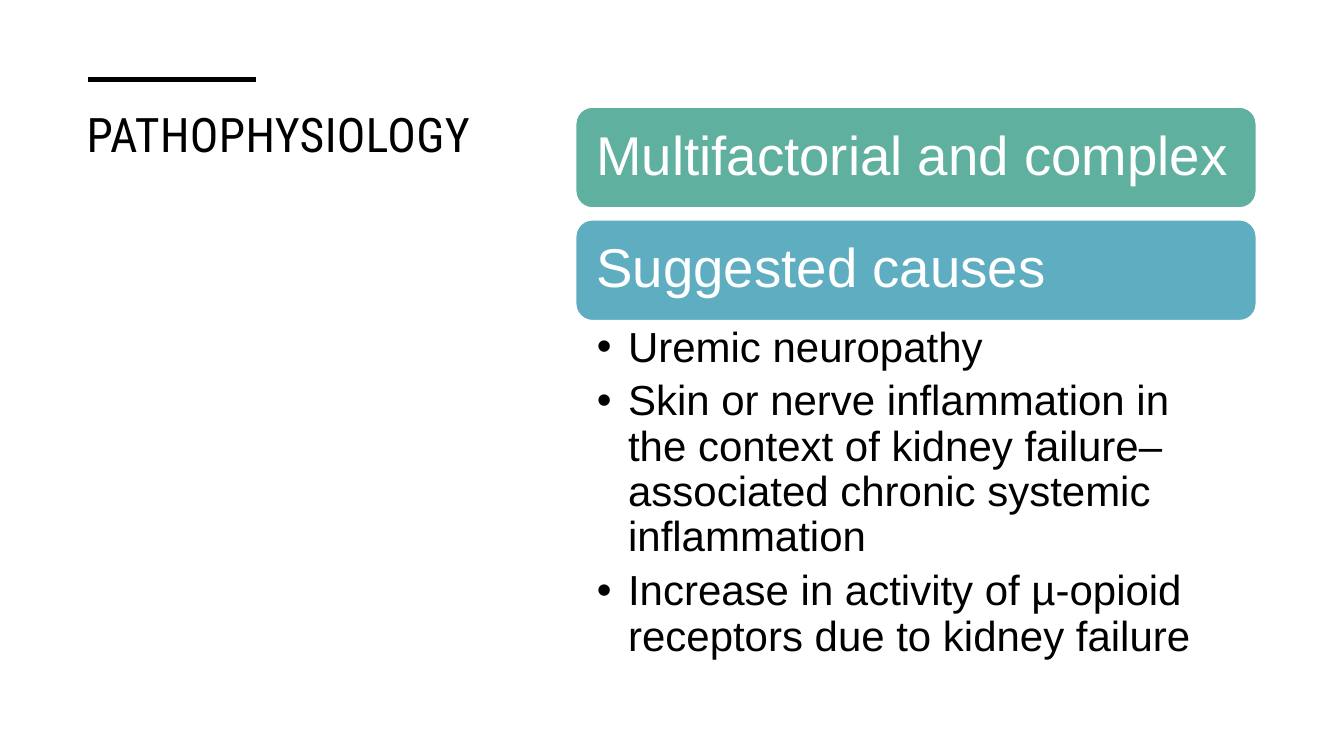
from dataclasses import dataclass

from lxml.etree import SubElement
from pptx import Presentation
from pptx.dml.color import RGBColor
from pptx.enum.shapes import MSO_CONNECTOR, MSO_SHAPE
from pptx.enum.text import MSO_ANCHOR, MSO_AUTO_SIZE, PP_ALIGN
from pptx.oxml.ns import qn
from pptx.slide import Slide
from pptx.text.text import TextFrame, _Paragraph
from pptx.util import Cm, Pt


@dataclass(frozen=True)
class Theme:
    ink: RGBColor = RGBColor(0x00, 0x00, 0x00)
    paper: RGBColor = RGBColor(0xFF, 0xFF, 0xFF)
    green: RGBColor = RGBColor(0x5F, 0xB0, 0x9F)
    blue: RGBColor = RGBColor(0x5F, 0xAD, 0xC1)
    title_font: str = "Roboto Condensed"
    body_font: str = "Arial"
    title_size: int = 34
    bar_size: int = 39
    bullet_size: int = 30


@dataclass(frozen=True)
class Bar:
    text: str
    fill: RGBColor


THEME = Theme()
BARS = [Bar("Multifactorial and complex", THEME.green),
        Bar("Suggested causes", THEME.blue)]
CAUSES = [
    "Uremic neuropathy",
    "Skin or nerve inflammation in the context of kidney failure–associated "
    "chronic systemic inflammation",
    "Increase in activity of µ-opioid receptors due to kidney failure",
]
# Column of bars, in cm
LEFT, TOP, WIDTH, BAR_HEIGHT, BAR_PITCH = 14.51, 2.7, 17.15, 2.54, 2.84
CAUSES_TOP = TOP + (len(BARS) - 1) * BAR_PITCH + BAR_HEIGHT


def format_runs(p: _Paragraph, font: str, size: int, color: RGBColor) -> None:
    p.alignment = PP_ALIGN.LEFT
    for r in p.runs:
        r.font.name = font
        r.font.size = Pt(size)
        r.font.color.rgb = color


def set_insets(tf: TextFrame, left: float, top: float, right: float, bottom: float) -> None:
    """Set the insets in cm, and wrap the text without resizing it."""
    tf.margin_left, tf.margin_top = Cm(left), Cm(top)
    tf.margin_right, tf.margin_bottom = Cm(right), Cm(bottom)
    tf.word_wrap = True
    tf.auto_size = MSO_AUTO_SIZE.NONE


def add_bullet(p: _Paragraph, indent: float) -> None:
    pPr = p._p.get_or_add_pPr()
    pPr.set("marL", str(Cm(indent)))
    pPr.set("indent", str(-Cm(indent)))
    SubElement(pPr, qn("a:buFont")).set("typeface", THEME.body_font)
    SubElement(pPr, qn("a:buChar")).set("char", "•")


def add_title(s: Slide) -> None:
    title = s.shapes.title
    title.left, title.top, title.width, title.height = Cm(1.93), Cm(2.51), Cm(10.87), Cm(11.05)
    tf = title.text_frame
    tf.text = "PATHOPHYSIOLOGY"
    set_insets(tf, 0.25, 0.13, 0.25, 0.13)
    tf.vertical_anchor = MSO_ANCHOR.TOP
    p = tf.paragraphs[0]
    format_runs(p, THEME.title_font, THEME.title_size, THEME.ink)
    p.runs[0].font._element.set("spc", "30")


def add_accent_line(s: Slide) -> None:
    line = s.shapes.add_connector(MSO_CONNECTOR.STRAIGHT, Cm(2.23), Cm(2), Cm(6.45), Cm(2))
    line.line.color.rgb = THEME.ink
    line.line.width = Pt(3.5)
    SubElement(line._element.spPr, qn("a:effectLst"))


def add_bar(s: Slide, bar: Bar, top: float) -> None:
    sp = s.shapes.add_shape(MSO_SHAPE.ROUNDED_RECTANGLE,
                            Cm(LEFT), Cm(top), Cm(WIDTH), Cm(BAR_HEIGHT))
    sp.shadow.inherit = False
    sp.fill.solid()
    sp.fill.fore_color.rgb = bar.fill
    sp.line.color.rgb = THEME.paper
    sp.line.width = Pt(1)
    tf = sp.text_frame
    tf.text = bar.text
    set_insets(tf, 0.4, 0.4, 0.4, 0.4)
    tf.vertical_anchor = MSO_ANCHOR.MIDDLE
    p = tf.paragraphs[0]
    p.line_spacing = 0.9
    format_runs(p, THEME.body_font, THEME.bar_size, THEME.paper)


def add_causes(s: Slide) -> None:
    box = s.shapes.add_textbox(Cm(LEFT), Cm(CAUSES_TOP), Cm(WIDTH), Cm(8.51))
    tf = box.text_frame
    tf.text = "\n".join(CAUSES)
    set_insets(tf, 0.53, 0.13, 0.76, 0.13)
    for p in tf.paragraphs:
        p.level = 1
        p.line_spacing = 0.9
        p.space_after = Pt(6)
        add_bullet(p, 0.79)
        format_runs(p, THEME.body_font, THEME.bullet_size, THEME.ink)


def main() -> None:
    prs = Presentation()
    prs.slide_width, prs.slide_height = Cm(33.87), Cm(19.05)
    s = prs.slides.add_slide(prs.slide_layouts[5])
    add_title(s)
    add_accent_line(s)
    for i, bar in enumerate(BARS):
        add_bar(s, bar, TOP + i * BAR_PITCH)
    add_causes(s)
    prs.save("out.pptx")


if __name__ == "__main__":
    main()
